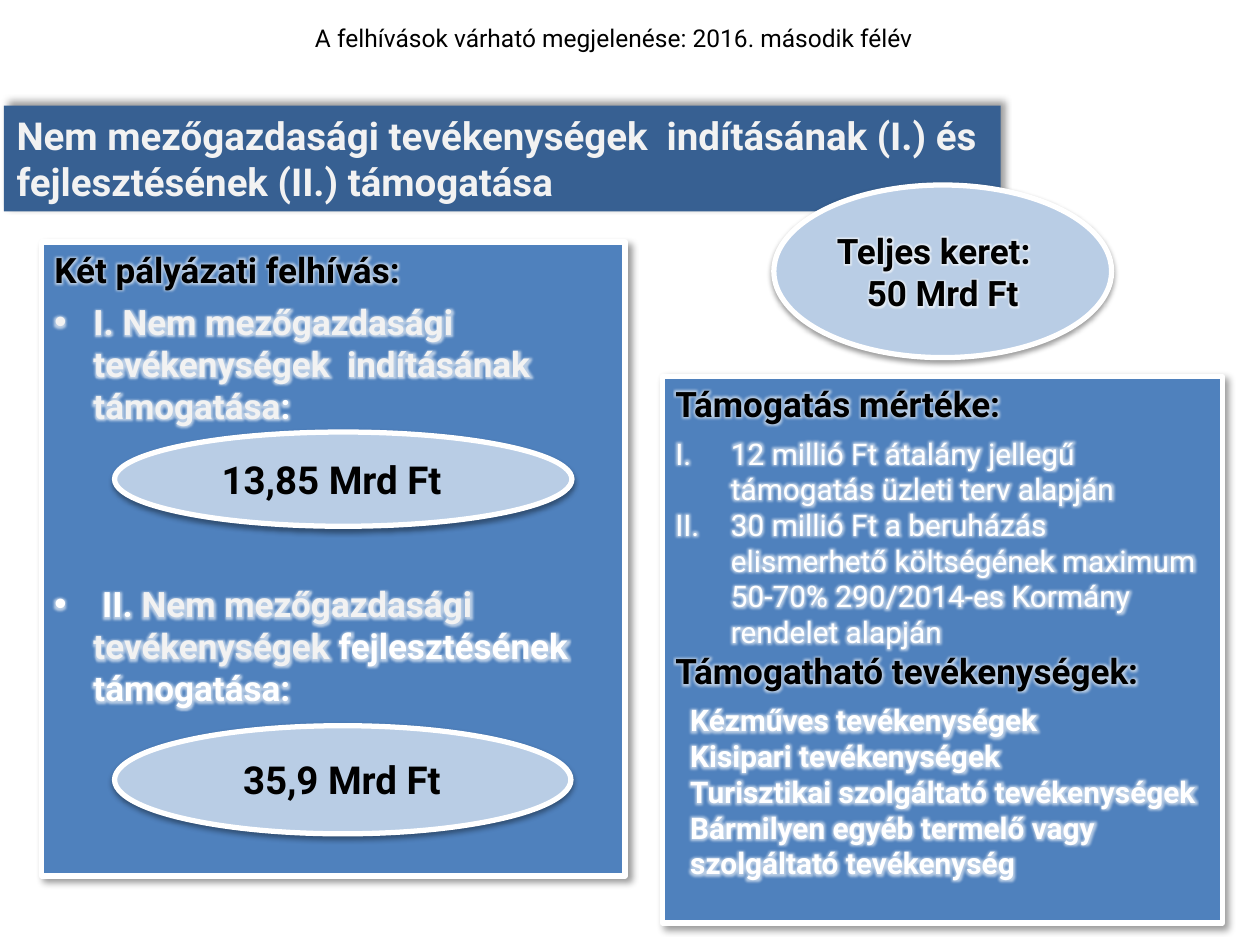
"""Builds the slide on the two calls for non-agricultural activities."""
from lxml.etree import SubElement
from pptx import Presentation
from pptx.dml.color import RGBColor
from pptx.enum.shapes import MSO_SHAPE
from pptx.enum.text import MSO_ANCHOR, MSO_AUTO_SIZE, PP_ALIGN
from pptx.oxml.ns import qn
from pptx.util import Cm, Pt

COLORS = {
    "panel": "4F81BD",
    "banner": "376092",
    "oval": "B9CDE5",
    "white": "FFFFFF",
    "pale": "F2F2F2",
    "black": "000000",
}
FONT = "Roboto"
PANEL_SHADOW = (40, 4, 3, 45)
BANNER_SHADOW = (40, 4, 3, 315)
OVAL_SHADOW = (38, 3.1, 1.6, 90)


def rgb(name):
    return RGBColor.from_string(COLORS[name])


def add_color(parent, name, alpha):
    color = SubElement(parent, qn("a:srgbClr"), val=COLORS[name])
    SubElement(color, qn("a:alpha"), val=str(alpha * 1000))


def place(shape, box):
    shape.left, shape.top, shape.width, shape.height = (Cm(length) for length in box)


def decorate(shape, fill, shadow, outlined=True):
    shape.fill.solid()
    shape.fill.fore_color.rgb = rgb(fill)
    if outlined:
        shape.line.color.rgb = rgb("white")
        shape.line.width = Pt(3)
    else:
        shape.line.fill.background()
    shape.shadow.inherit = False
    alpha, blur, distance, angle = shadow
    effects = shape.element.spPr.find(qn("a:effectLst"))
    outer = SubElement(effects, qn("a:outerShdw"), blurRad=str(Pt(blur)),
                       dist=str(Pt(distance)), dir=str(angle * 60000), rotWithShape="0")
    add_color(outer, "black", alpha)


def prepare_frame(shape, anchor=MSO_ANCHOR.TOP, wrap=True):
    frame = shape.text_frame
    frame.auto_size = MSO_AUTO_SIZE.NONE
    frame.word_wrap = wrap
    frame.vertical_anchor = anchor
    return frame


def add_run(paragraph, text, size, color="black", bold=True, glow=False):
    run = paragraph.add_run()
    run.text = text
    font = run.font
    font.size, font.bold = Pt(size), bold
    font.color.rgb = rgb(color)
    if glow:
        effects = SubElement(run._r.get_or_add_rPr(), qn("a:effectLst"))
        add_color(SubElement(effects, qn("a:glow"), rad=str(Pt(5))), "white", 60)
    font.name = FONT


def add_paragraph(frame, before=0, margin=0, hanging=False, bullet=None,
                  align=PP_ALIGN.LEFT):
    first = frame.paragraphs[0]
    paragraph = frame.add_paragraph() if first.runs else first
    paragraph.alignment = align
    paragraph.space_before = Pt(before)
    properties = paragraph._p.get_or_add_pPr()
    properties.set("marL", str(Cm(margin)))
    properties.set("indent", str(-Cm(margin) if hanging else 0))
    if bullet == "roman":
        SubElement(properties, qn("a:buAutoNum"), type="romanUcPeriod")
    elif bullet:
        SubElement(properties, qn("a:buChar"), char=bullet)
    else:
        SubElement(properties, qn("a:buNone"))
    return paragraph


def add_heading(frame, text):
    add_run(add_paragraph(frame), text, 20, glow=True)


def fill_banner(title):
    place(title, (0.08, 2.13, 20.09, 2.13))
    decorate(title, "banner", BANNER_SHADOW, outlined=False)
    add_run(add_paragraph(prepare_frame(title)),
            "Nem mezőgazdasági tevékenységek  indításának (I.) és "
            "fejlesztésének (II.) támogatása", 22, "pale")


def fill_calls(panel):
    place(panel, (0.84, 4.88, 11.76, 12.78))
    decorate(panel, "panel", PANEL_SHADOW)
    frame = prepare_frame(panel)
    add_heading(frame, "Két pályázati felhívás:")
    calls = [
        (6, [("I. Nem mezőgazdasági tevékenységek  indításának támogatása", "pale"),
             (":", "white")]),
        (89, [(" II. ", "white"), ("Nem mezőgazdasági tevékenységek ", "pale"),
              ("fejlesztésének támogatása:", "white")]),
    ]
    for before, parts in calls:
        call = add_paragraph(frame, before, 0.79, hanging=True, bullet="•")
        for text, color in parts:
            add_run(call, text, 20, color, glow=True)


def fill_support(panel):
    place(panel, (13.36, 7.59, 11.28, 11.02))
    decorate(panel, "panel", PANEL_SHADOW)
    frame = prepare_frame(panel)
    add_heading(frame, "Támogatás mértéke:")
    rates = ["12 millió Ft átalány jellegű támogatás üzleti terv alapján",
             "30 millió Ft a beruházás elismerhető költségének maximum "
             "50-70% 290/2014-es Kormány rendelet alapján"]
    for index, rate in enumerate(rates):
        line = add_paragraph(frame, 0 if index else 6, 1.12, hanging=True, bullet="roman")
        add_run(line, rate, 17, "white", bold=False, glow=True)
    add_heading(frame, "Támogatható tevékenységek:")
    activities = ["Kézműves tevékenységek", "Kisipari tevékenységek",
                  "Turisztikai szolgáltató tevékenységek",
                  "Bármilyen egyéb termelő vagy szolgáltató tevékenység"]
    for index, activity in enumerate(activities):
        line = add_paragraph(frame, 0 if index else 6, 0.3)
        add_run(line, activity, 17, "white", glow=True)


def add_oval(slide, box):
    oval = slide.shapes.add_shape(MSO_SHAPE.OVAL, *(Cm(length) for length in box))
    decorate(oval, "oval", OVAL_SHADOW)
    return oval


def add_label(slide, box, text, size, bold=True, wrap=False):
    label = slide.shapes.add_textbox(*(Cm(length) for length in box))
    add_run(add_paragraph(prepare_frame(label, wrap=wrap)), text, size, bold=bold)


def add_budget(slide):
    frame = prepare_frame(add_oval(slide, (15.6, 3.73, 6.81, 3.48)), MSO_ANCHOR.MIDDLE)
    heading = add_paragraph(frame, align=PP_ALIGN.CENTER)
    heading._p.get_or_add_pPr().set("marR", str(Cm(0.36)))
    add_run(heading, "Teljes keret:", 20, glow=True)
    amount = add_paragraph(frame, align=PP_ALIGN.CENTER)
    amount._p.get_or_add_pPr().set("marR", "0")
    add_run(amount, "50 Mrd Ft", 20, glow=True)


def main():
    deck = Presentation()
    deck.slide_width, deck.slide_height = Cm(25.4), Cm(19.05)
    slide = deck.slides.add_slide(deck.slide_layouts[3])
    banner, calls, support = slide.placeholders
    fill_banner(banner)
    fill_calls(calls)
    fill_support(support)
    add_oval(slide, (2.31, 8.71, 9.22, 1.9))
    add_oval(slide, (2.31, 14.63, 9.2, 2.18))
    add_label(slide, (4.22, 9.07, 5.1, 1.19), "13,85 Mrd Ft", 22)
    add_label(slide, (4.65, 15.11, 4.65, 1.19), "35,9 Mrd Ft", 22)
    add_label(slide, (6.1, 0.33, 15.98, 0.86),
              "A felhívások várható megjelenése: 2016. második félév", 14,
              bold=False, wrap=True)
    add_budget(slide)
    deck.save("out.pptx")


if __name__ == "__main__":
    main()
